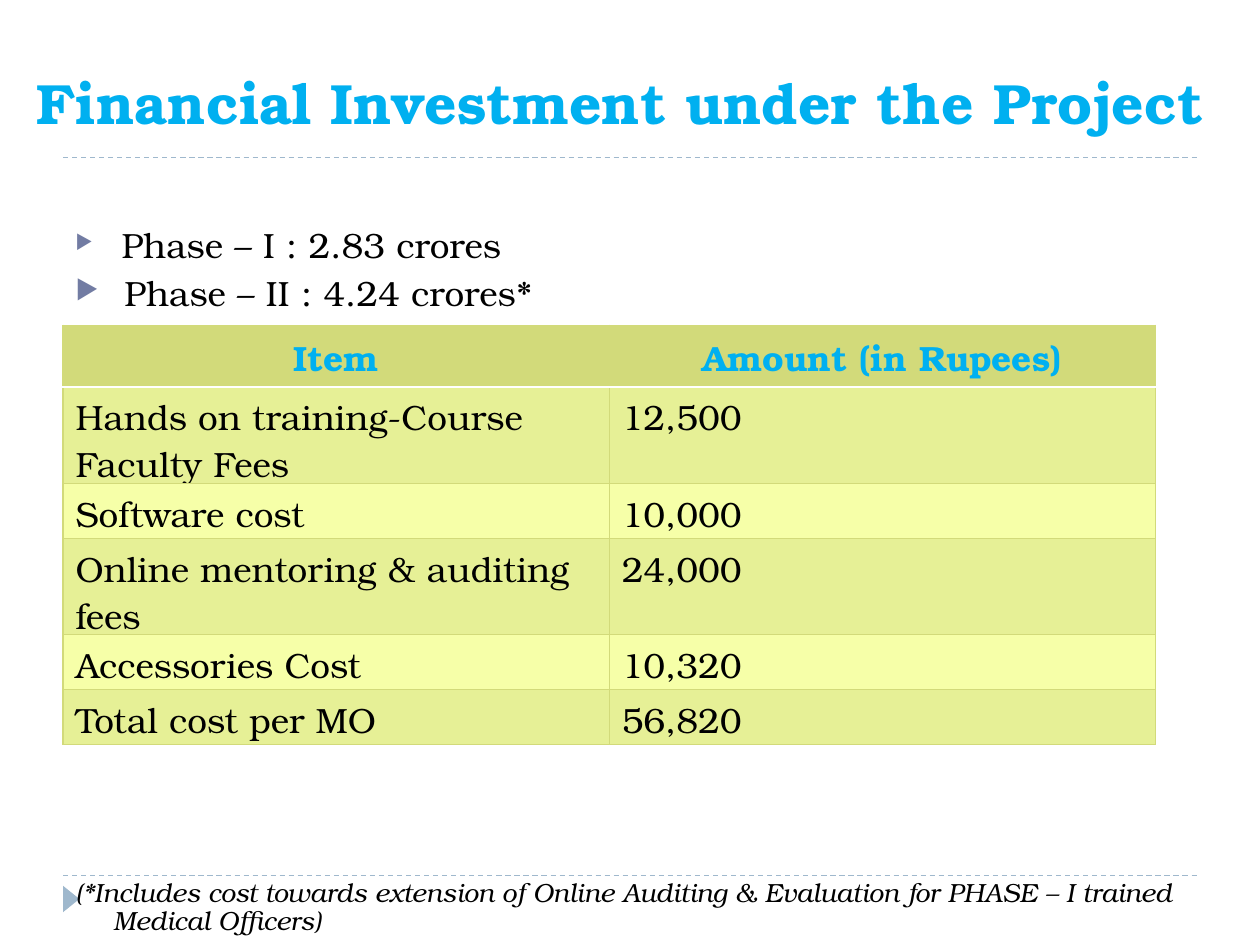
from dataclasses import dataclass

from lxml import etree
from pptx import Presentation
from pptx.dml.color import RGBColor
from pptx.enum.dml import MSO_LINE
from pptx.enum.shapes import MSO_CONNECTOR, MSO_SHAPE
from pptx.enum.text import MSO_ANCHOR, MSO_AUTO_SIZE, PP_ALIGN
from pptx.oxml.ns import qn
from pptx.util import Inches, Pt

FONT = "TeX Gyre Bonum"
BLACK, WHITE, SKY = "000000", "FFFFFF", "00B0F0"
STEEL, BULLET = "9FB8CD", "727CA3"
OLIVE, BAND, PALE = "D2DA7A", "E6F096", "F6FFA8"
CENTER = PP_ALIGN.CENTER
MARGIN = 0.5


@dataclass
class Run:
    text: str
    size: float = 20
    color: str = BLACK
    bold: bool = False
    italic: bool = False


@dataclass
class Para:
    runs: list[Run]
    bullet: bool = False


PHASES = [
    Para([Run(" ", 15), Run("Phase – I : 2.83 crores")], True),
    Para([Run(" Phase – II : 4.24 crores"), Run("*", bold=True)], True),
]
FOOTNOTE = [Para([Run("(*Includes cost towards extension of Online Auditing & Evaluation "
                      "for PHASE – I trained Medical Officers)", 15, italic=True)])]
ROWS = [
    ("Item", "Amount (in Rupees)"),
    ("Hands on training-Course Faculty Fees", "12,500"),
    ("Software cost", "10,000"),
    ("Online mentoring & auditing fees", "24,000"),
    ("Accessories Cost", "10,320"),
    ("Total cost per MO", "56,820"),
]
ROW_HEIGHTS = [0.49, 0.74, 0.42, 0.74, 0.42, 0.42]


def rgb(color: str) -> RGBColor:
    return RGBColor.from_string(color)


def add_run(p, run: Run) -> None:
    r = p.add_run()
    r.text = run.text
    formats = {"name": FONT, "size": Pt(run.size), "bold": run.bold, "italic": run.italic}
    for name, value in formats.items():
        setattr(r.font, name, value)
    r.font.color.rgb = rgb(run.color)


def set_hanging(p, bullet: bool) -> None:
    pPr = p._p.get_or_add_pPr()
    pPr.set("marL", str(Inches(0.3)))
    pPr.set("indent", str(-Inches(0.3)))
    if not bullet:
        etree.SubElement(pPr, qn("a:buNone"))
        return
    clr = etree.SubElement(pPr, qn("a:buClr"))
    etree.SubElement(clr, qn("a:srgbClr"), val=BULLET)
    etree.SubElement(pPr, qn("a:buSzPct"), val="76000")
    etree.SubElement(pPr, qn("a:buChar"), char="▶")


def add_text(s, top: float, height: float, paras: list[Para]) -> None:
    tf = s.shapes.add_textbox(Inches(MARGIN), Inches(top), Inches(9), Inches(height)).text_frame
    tf.word_wrap = True
    tf.margin_top = tf.margin_bottom = 0
    for i, para in enumerate(paras):
        p = tf.paragraphs[0] if i == 0 else tf.add_paragraph()
        p.line_spacing = 0.9
        p.space_after = Pt(6)
        set_hanging(p, para.bullet)
        for run in para.runs:
            add_run(p, run)


def add_rule(s, y: float) -> None:
    line = s.shapes.add_connector(MSO_CONNECTOR.STRAIGHT, Inches(MARGIN), Inches(y),
                                  Inches(10 - MARGIN), Inches(y))
    line.line.color.rgb = rgb(STEEL)
    line.line.width = Pt(0.75)
    line.line.dash_style = MSO_LINE.DASH
    etree.SubElement(line._element.spPr, qn("a:effectLst"))


def set_borders(cell, borders: dict[str, tuple[str, float]]) -> None:
    tcPr = cell._tc.get_or_add_tcPr()
    for i, (side, (color, width)) in enumerate(borders.items()):
        ln = etree.Element(qn(f"a:ln{side}"), w=str(Pt(width)))
        fill = etree.SubElement(ln, qn("a:solidFill"))
        etree.SubElement(fill, qn("a:srgbClr"), val=color)
        tcPr.insert(i, ln)


def add_cost_table(s) -> None:
    table = s.shapes.add_table(len(ROWS), 2, Inches(MARGIN), Inches(2.58), Inches(8.67),
                               Inches(sum(ROW_HEIGHTS))).table
    for i, (texts, height) in enumerate(zip(ROWS, ROW_HEIGHTS)):
        table.rows[i].height = Inches(height)
        header = i == 0
        for j, text in enumerate(texts):
            cell = table.cell(i, j)
            cell.fill.solid()
            cell.fill.fore_color.rgb = rgb(OLIVE if header else BAND if i % 2 else PALE)
            borders = dict.fromkeys("LRTB", (OLIVE, 0.75))
            if header:
                borders["B"] = (WHITE, 1.5)
            elif i == 1:
                borders["T"] = (WHITE, 1.5)
            set_borders(cell, borders)
            p = cell.text_frame.paragraphs[0]
            if header:
                p.alignment = CENTER
            add_run(p, Run(text, color=SKY if header else BLACK, bold=header))


def add_title(s, text: str) -> None:
    title = s.shapes.title
    box = {"left": 0, "top": 0.58, "width": 9.84, "height": 0.55}
    for name, value in box.items():
        setattr(title, name, Inches(value))
    tf = title.text_frame
    tf.auto_size = MSO_AUTO_SIZE.NONE
    tf.vertical_anchor = MSO_ANCHOR.BOTTOM
    p = tf.paragraphs[0]
    p.alignment = CENTER
    add_run(p, Run(text, 32.4, SKY, bold=True))


def main() -> None:
    prs = Presentation()
    prs.slide_width, prs.slide_height = Inches(10), Inches(7.5)
    s = prs.slides.add_slide(prs.slide_layouts[5])

    # Dashed rules and corner marker
    for y in (6.95, 1.25):
        add_rule(s, y)
    marker = s.shapes.add_shape(MSO_SHAPE.ISOSCELES_TRIANGLE, Inches(0.46), Inches(7.07),
                                Inches(0.21), Inches(0.13))
    marker.rotation = 90
    marker.shadow.inherit = False
    marker.fill.solid()
    marker.fill.fore_color.rgb = rgb(STEEL)
    marker.line.fill.background()

    # Title, phase costs, footnote and cost table
    add_title(s, "Financial Investment under the Project")
    add_text(s, 1.81, 0.75, PHASES)
    add_text(s, 6.98, 0.5, FOOTNOTE)
    add_cost_table(s)

    prs.save("out.pptx")


if __name__ == "__main__":
    main()
